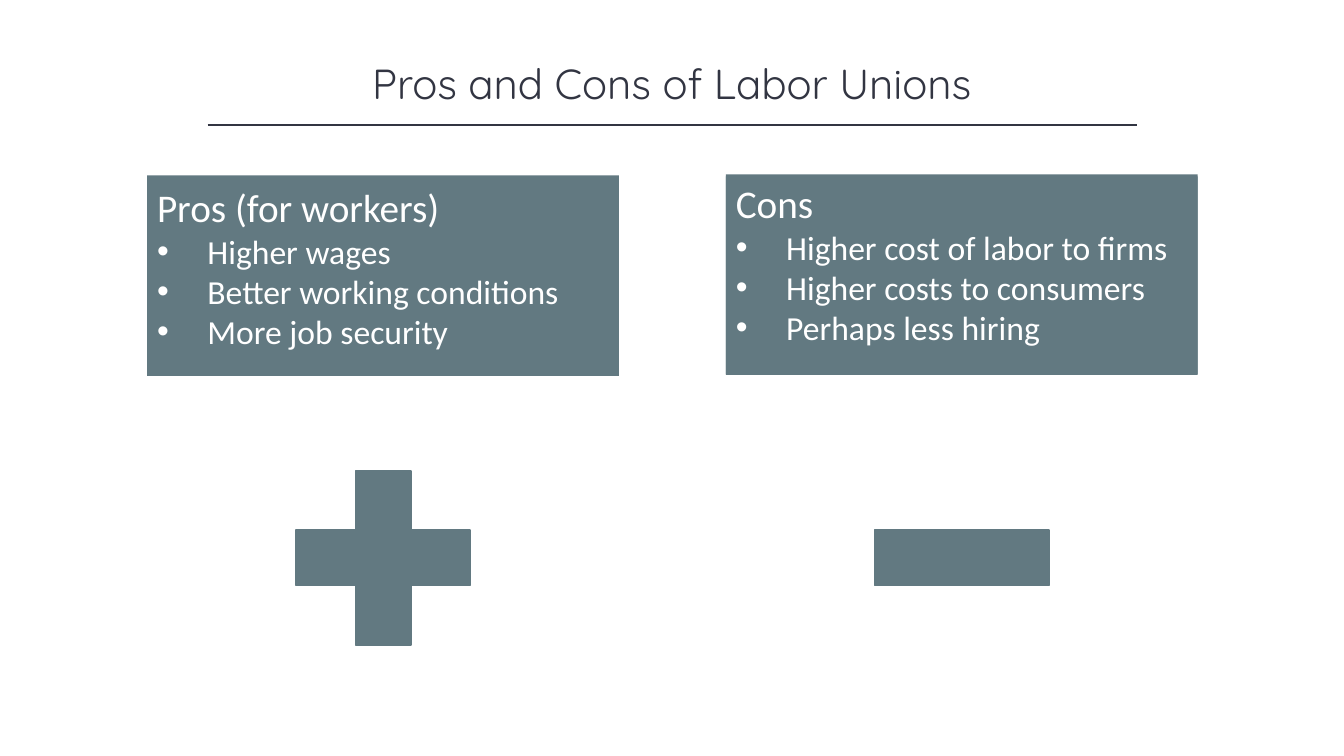
"""Build a slide weighing the pros and cons of labor unions."""
from dataclasses import dataclass
from typing import Any

from lxml.etree import SubElement
from pptx import Presentation
from pptx.dml.color import RGBColor
from pptx.enum.shapes import MSO_CONNECTOR, MSO_SHAPE
from pptx.enum.text import MSO_ANCHOR, MSO_AUTO_SIZE, PP_ALIGN
from pptx.oxml.ns import qn
from pptx.util import Inches, Pt

COLORS = {"ink": "323542", "slate": "627981", "white": "FFFFFF"}
SLIDE_WIDTH, SLIDE_HEIGHT = Inches(13.33), Inches(7.5)
COLUMN, ROW = SLIDE_WIDTH / 100, SLIDE_HEIGHT / 100
CARD_WIDTH = 35.11
SIGN_WIDTH, SIGN_TOP, SIGN_HEIGHT = 17.63, 58.13, 31.33
BULLET_INDENT = Inches(0.5)

FRAME_FORMAT = {
    "word_wrap": True,
    "auto_size": MSO_AUTO_SIZE.SHAPE_TO_FIT_TEXT,
}
TITLE_FONT = {"name": "Quicksand", "size": Pt(30), "bold": False}
HEADING_FONT = {"name": "Calibri", "size": Pt(28)}
POINT_FONT = {"name": "Calibri", "size": Pt(24)}


@dataclass(frozen=True)
class Band:
    """Vertical extent in grid rows."""

    top: float
    height: float


@dataclass(frozen=True)
class Side:
    """One side of the argument, with its card and sign."""

    heading: str
    points: tuple[str, ...]
    left: float
    backing: Band
    card: Band
    sign: MSO_SHAPE


SIDES = (
    Side("Pros (for workers)",
         ("Higher wages", "Better working conditions", "More job security"),
         10.95, Band(23.2, 26.53), Band(23.6, 23.73), MSO_SHAPE.MATH_PLUS),
    Side("Cons",
         ("Higher cost of labor to firms", "Higher costs to consumers",
          "Perhaps less hiring"),
         54.01, Band(23.33, 26.27), Band(23.07, 26.4), MSO_SHAPE.MATH_MINUS),
)


def color(name: str) -> RGBColor:
    """Look up a palette color."""
    return RGBColor.from_string(COLORS[name])


def grid(left: float, top: float, width: float, height: float) -> tuple[int, ...]:
    """Turn grid columns and rows into slide lengths."""
    return (round(left * COLUMN), round(top * ROW),
            round(width * COLUMN), round(height * ROW))


def apply_format(target: Any, values: dict[str, Any]) -> None:
    """Set each format value on the target."""
    for attribute, value in values.items():
        setattr(target, attribute, value)


def style_font(font: Any, values: dict[str, Any], color_name: str) -> None:
    """Format a font and color it."""
    apply_format(font, values)
    font.color.rgb = color(color_name)


def add_slate_shape(shapes: Any, kind: MSO_SHAPE, left: float, width: float,
                    band: Band) -> Any:
    """Add a borderless slate shape without a shadow."""
    shape = shapes.add_shape(kind, *grid(left, band.top, width, band.height))
    shape.shadow.inherit = False
    shape.fill.solid()
    shape.fill.fore_color.rgb = color("slate")
    shape.line.fill.background()
    return shape


def add_bullet(paragraph: Any) -> None:
    """Give a paragraph a hanging round bullet."""
    properties = paragraph._p.get_or_add_pPr()
    properties.set("marL", str(BULLET_INDENT))
    properties.set("indent", str(-BULLET_INDENT))
    SubElement(properties, qn("a:buFont"), typeface="Arial")
    SubElement(properties, qn("a:buChar"), char="•")


def add_card(slide: Any, side: Side) -> None:
    """Add the grouped backing and text card of one side."""
    shapes = slide.shapes.add_group_shape().shapes
    add_slate_shape(shapes, MSO_SHAPE.RECTANGLE, side.left, CARD_WIDTH, side.backing)
    card = add_slate_shape(shapes, MSO_SHAPE.RECTANGLE, side.left, CARD_WIDTH, side.card)
    frame = card.text_frame
    apply_format(frame, FRAME_FORMAT | {"vertical_anchor": MSO_ANCHOR.TOP})
    heading = frame.paragraphs[0]
    heading.text = side.heading
    heading.alignment = PP_ALIGN.LEFT
    style_font(heading.runs[0].font, HEADING_FONT, "white")
    for text in side.points:
        point = frame.add_paragraph()
        point.text = text
        point.alignment = PP_ALIGN.LEFT
        add_bullet(point)
        style_font(point.runs[0].font, POINT_FONT, "white")


def add_sign(slide: Any, side: Side) -> None:
    """Add the sign centered under one side's card."""
    left = side.left + (CARD_WIDTH - SIGN_WIDTH) / 2
    sign = add_slate_shape(slide.shapes, side.sign, left, SIGN_WIDTH,
                           Band(SIGN_TOP, SIGN_HEIGHT))
    sign.line.color.rgb = color("slate")
    sign.line.width = Pt(1)


def add_heading(slide: Any) -> None:
    """Fill the title and underline it."""
    title = slide.shapes.title
    places = zip(("left", "top", "width", "height"), grid(12.5, 6.93, 75, 8.13))
    apply_format(title, dict(places))
    title.text = "Pros and Cons of Labor Unions"
    apply_format(title.text_frame, FRAME_FORMAT | {"vertical_anchor": MSO_ANCHOR.MIDDLE})
    paragraph = title.text_frame.paragraphs[0]
    paragraph.alignment = PP_ALIGN.CENTER
    style_font(paragraph.runs[0].font, TITLE_FONT, "ink")

    left, top, width, _ = grid(15.45, 16.53, 69.17, 0)
    rule = slide.shapes.add_connector(MSO_CONNECTOR.STRAIGHT, left, top, left + width, top)
    rule.line.color.rgb = color("ink")
    rule.line.width = Pt(1)
    SubElement(rule._element.spPr, qn("a:effectLst"))


def main() -> None:
    """Build and save the presentation."""
    presentation = Presentation()
    apply_format(presentation, {"slide_width": SLIDE_WIDTH, "slide_height": SLIDE_HEIGHT})
    slide = presentation.slides.add_slide(presentation.slide_layouts.get_by_name("Title Only"))
    slide.background.fill.solid()
    slide.background.fill.fore_color.rgb = color("white")
    add_heading(slide)
    for side in SIDES:
        add_card(slide, side)
    for side in reversed(SIDES):
        add_sign(slide, side)
    presentation.save("out.pptx")


if __name__ == "__main__":
    main()
